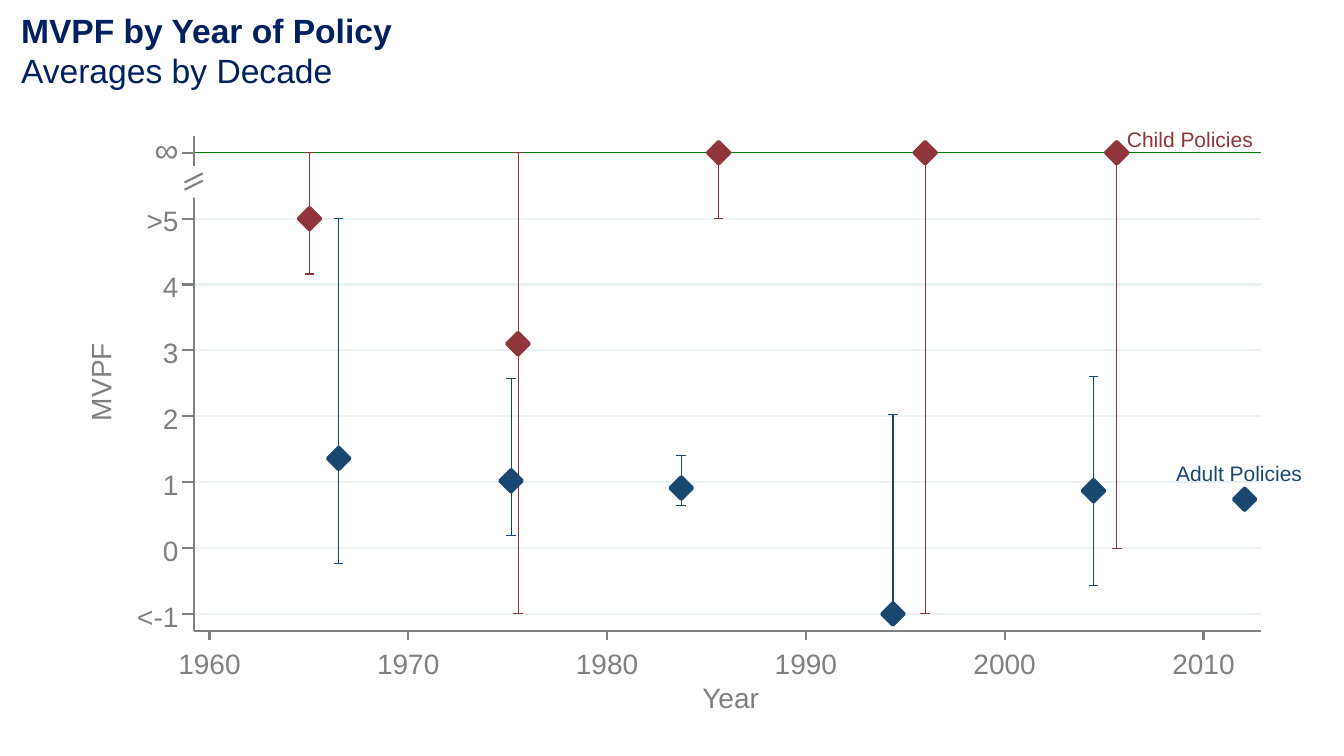
import pptx
import pptx.util
import pptx.dml.color
import pptx.enum.shapes
import pptx.enum.text
import pptx.oxml.ns
import lxml.etree

Cm = pptx.util.Cm
Pt = pptx.util.Pt
RGB = pptx.dml.color.RGBColor.from_string
ALIGN = pptx.enum.text.PP_ALIGN
SHAPE = pptx.enum.shapes.MSO_SHAPE

COLORS = {
    "title": "002060", "axis": "808080", "grid": "EAF2F3", "white": "FFFFFF",
    "infinity": "008000", "adult": "1A476F", "child": "90353B",
}

# Plot geometry in cm; infinity sits one step above 5
LEFT, RIGHT, TOP, BOTTOM = 4.88, 31.78, 3.43, 15.9
ZERO_Y, STEP = 13.81, 1.66
FIRST_YEAR, FIRST_YEAR_X, DECADE = 1960, 5.28, 5.01
INFINITY = 6
CAP = 0.12
MARKER = 0.56
value_y = {value: ZERO_Y - STEP * value for value in range(-1, INFINITY + 1)}

# Year, average, low and high end of the interval
POLICIES = {
    "adult": [
        (1966.5, 1.36, -0.23, 5), (1975.17, 1.02, 0.19, 2.58),
        (1983.73, 0.91, 0.65, 1.4), (1994.38, -1, -1, 2.03),
        (2004.47, 0.87, -0.57, 2.6), (2012.07, 0.74, 0.68, 0.81),
    ],
    "child": [
        (1965.03, 5, 4.16, INFINITY), (1975.52, 3.1, -1, INFINITY),
        (1985.61, INFINITY, 5, INFINITY), (1996, INFINITY, -1, INFINITY),
        (2005.64, INFINITY, 0, INFINITY),
    ],
}
SERIES_LABELS = {
    "adult": ("Adult Policies", 29.64, 11.61),
    "child": ("Child Policies", 28.4, 3.2),
}

deck = pptx.Presentation()
deck.slide_width, deck.slide_height = Cm(33.87), Cm(19.05)
slide = deck.slides.add_slide(deck.slide_layouts[5])
shapes = slide.shapes


def draw_line(x1, y1, x2, y2, color, width=1.5):
    line = shapes.add_connector(
        pptx.enum.shapes.MSO_CONNECTOR.STRAIGHT, Cm(x1), Cm(y1), Cm(x2), Cm(y2))
    line.line.color.rgb = RGB(COLORS[color])
    line.line.width = Pt(width)
    properties = line._element.find(pptx.oxml.ns.qn("p:spPr"))
    lxml.etree.SubElement(properties, pptx.oxml.ns.qn("a:effectLst"))


def write(box, text, size=20, color="axis", bold=False, align=ALIGN.LEFT):
    """Add one formatted paragraph to a box without margins."""
    frame = box.text_frame
    frame.word_wrap = True
    frame.auto_size = pptx.enum.text.MSO_AUTO_SIZE.NONE
    frame.vertical_anchor = pptx.enum.text.MSO_ANCHOR.TOP
    frame.margin_left = frame.margin_right = frame.margin_top = frame.margin_bottom = 0
    paragraph = frame.add_paragraph() if frame.text else frame.paragraphs[0]
    paragraph.alignment = align
    run = paragraph.add_run()
    run.text = text
    run.font.name, run.font.size, run.font.bold = "Arial", Pt(size), bold
    run.font.color.rgb = RGB(COLORS[color])


# Title
title = shapes.title
title.left, title.top, title.width, title.height = Cm(0.53), Cm(0.25), Cm(29.51), Cm(2.06)
write(title, "MVPF by Year of Policy", size=24, color="title", bold=True)
write(title, "Averages by Decade", size=24, color="title")

# Plot area and grid
plot_area = shapes.add_shape(
    SHAPE.RECTANGLE, Cm(LEFT), Cm(TOP), Cm(RIGHT - LEFT), Cm(BOTTOM - TOP))
plot_area.shadow.inherit = False
plot_area.fill.solid()
plot_area.fill.fore_color.rgb = RGB(COLORS["white"])
plot_area.line.color.rgb = RGB(COLORS["white"])
for y in value_y.values():
    draw_line(LEFT, y, RIGHT, y, "grid")
draw_line(LEFT, value_y[INFINITY], RIGHT, value_y[INFINITY], "infinity", 0.75)

# Intervals with caps
for series, points in POLICIES.items():
    for year, average, low, high in points:
        x = FIRST_YEAR_X + DECADE * (year - FIRST_YEAR) / 10
        low_y, high_y = ZERO_Y - STEP * low, ZERO_Y - STEP * high
        draw_line(x, low_y, x, high_y, series, 0.75)
        for cap_y in (high_y, low_y):
            draw_line(x - CAP, cap_y, x + CAP, cap_y, series, 0.75)

# Averages and series labels
for series, points in POLICIES.items():
    for year, average, low, high in points:
        x = FIRST_YEAR_X + DECADE * (year - FIRST_YEAR) / 10
        y = ZERO_Y - STEP * average
        marker = shapes.add_shape(
            SHAPE.DIAMOND, Cm(x - MARKER / 2), Cm(y - MARKER / 2), Cm(MARKER), Cm(MARKER))
        marker.shadow.inherit = False
        marker.fill.solid()
        marker.fill.fore_color.rgb = RGB(COLORS[series])
        marker.line.color.rgb = RGB(COLORS[series])
        marker.line.width = Pt(2.5)
    label, label_x, label_y = SERIES_LABELS[series]
    write(shapes.add_textbox(Cm(label_x), Cm(label_y), Cm(3.57), Cm(0.76)),
          label, size=15, color=series)

# MVPF axis
draw_line(LEFT, BOTTOM, LEFT, TOP, "axis")
for value, y in value_y.items():
    draw_line(LEFT, y, LEFT - 0.28, y, "axis")
    if value != INFINITY:
        label = {-1: "<-1", 5: ">5"}.get(value, str(value))
        write(shapes.add_textbox(Cm(3.2), Cm(y - 0.37), Cm(1.3), Cm(0.99)),
              label, align=ALIGN.RIGHT)
mvpf = shapes.add_textbox(Cm(1.45), Cm(9.13), Cm(2.29), Cm(0.99))
mvpf.rotation = 270
write(mvpf, "MVPF", align=ALIGN.CENTER)

# Year axis
draw_line(LEFT, BOTTOM, RIGHT, BOTTOM, "axis")
for decade in range(6):
    x = FIRST_YEAR_X + DECADE * decade
    draw_line(x, BOTTOM, x, BOTTOM + 0.23, "axis")
    write(shapes.add_textbox(Cm(x - 0.94), Cm(16.28), Cm(1.88), Cm(0.99)),
          str(FIRST_YEAR + 10 * decade), align=ALIGN.CENTER)
write(shapes.add_textbox(Cm(17.5), Cm(17.15), Cm(1.83), Cm(0.99)), "Year", align=ALIGN.CENTER)

# Axis break below infinity
axis_gap = shapes.add_shape(SHAPE.RECTANGLE, Cm(4.09), Cm(4.19), Cm(1.47), Cm(0.79))
axis_gap.shadow.inherit = False
axis_gap.fill.solid()
axis_gap.fill.fore_color.rgb = RGB(COLORS["white"])
axis_gap.line.fill.background()
write(shapes.add_textbox(Cm(3.89), Cm(3.25), Cm(0.61), Cm(1.02)),
      "∞", size=24, align=ALIGN.RIGHT)
draw_line(LEFT, 4.65, LEFT, 4.5, "white", 3)
for slash_y in (4.6, 4.78):
    draw_line(4.65, slash_y, 5.11, slash_y - 0.23, "axis")

deck.save("out.pptx")
